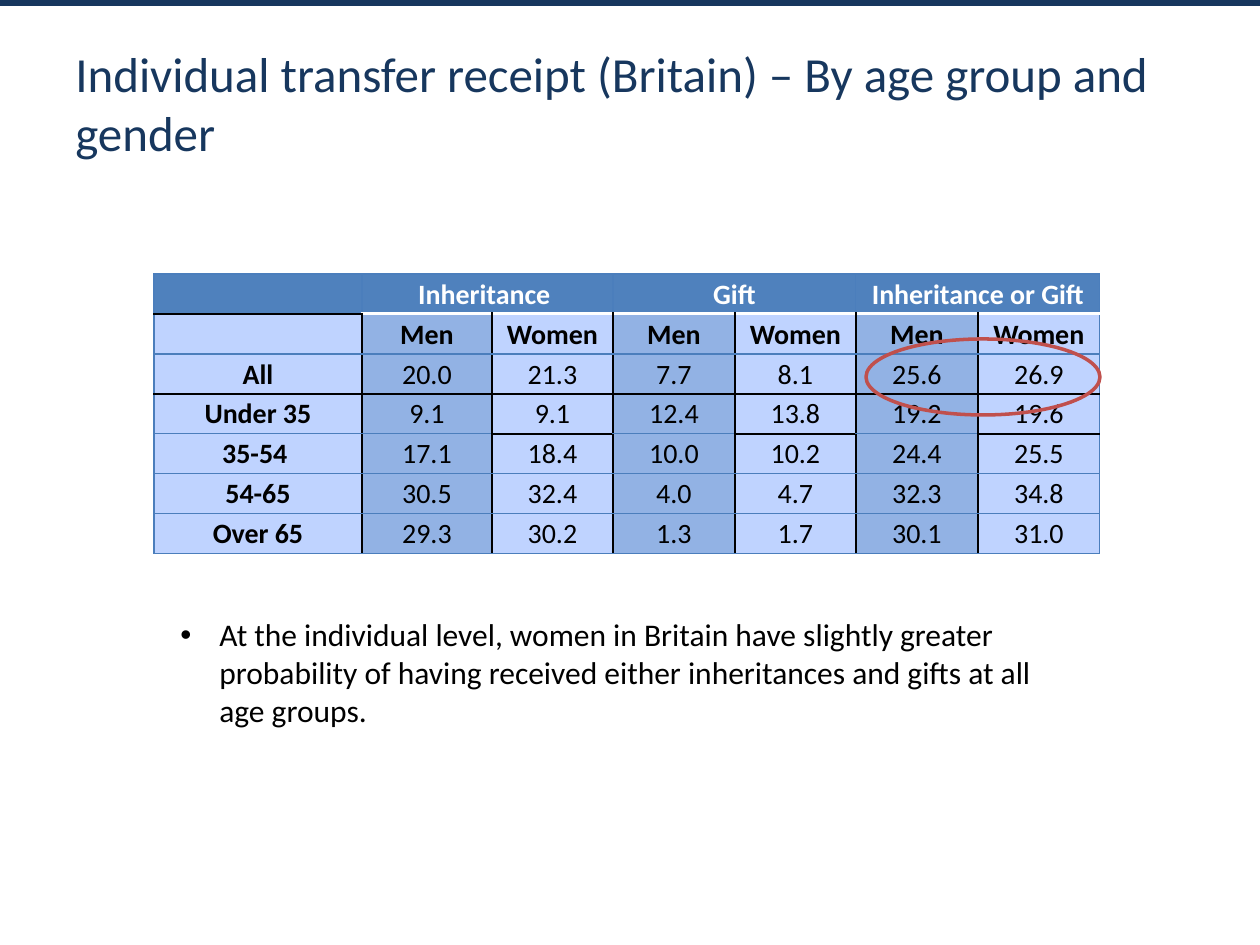
from lxml import etree
from pptx import Presentation, util as u
from pptx.dml.color import RGBColor
from pptx.enum import shapes, text
from pptx.oxml import ns

PX = 914400 / 126
NAVY = RGBColor(0x17, 0x37, 0x5E)
BLACK = RGBColor(0, 0, 0)
WHITE = RGBColor(255, 255, 255)
HEAD = RGBColor(0x4F, 0x81, 0xBD)
MEN = RGBColor(0x92, 0xB2, 0xE4)
PALE = RGBColor(0xBF, 0xD3, 0xFF)
EDGE = RGBColor(0x4B, 0x7E, 0xBC)
RED = RGBColor(0xC0, 0x50, 0x4D)

COLS = [208, 130, 121, 122, 121, 122, 122]
ROW = 40
GROUPS = ["Inheritance ", "Gift", "Inheritance or Gift"]
DATA = [
    ["", *["Men", "Women"] * 3],
    ["All", "20.0", "21.3", "7.7", "8.1", "25.6", "26.9"],
    ["Under 35", "9.1", "9.1", "12.4", "13.8", "19.2", "19.6"],
    ["35-54 ", "17.1", "18.4", "10.0", "10.2", "24.4", "25.5"],
    ["54-65", "30.5", "32.4", "4.0", "4.7", "32.3", "34.8"],
    ["Over 65", "29.3", "30.2", "1.3", "1.7", "30.1", "31.0"],
]


def px(*vals):
    """Turn px lengths into EMU."""
    return [u.Emu(round(v * PX)) for v in vals]


def put(obj, vals):
    """Set each attribute named in a dict."""
    for key, val in vals.items():
        setattr(obj, key, val)


def sub(node, tag, **vals):
    """Append a drawing element with the given attributes."""
    return etree.SubElement(node, ns.qn("a:" + tag), vals)


def style(par, size, ink, bold=False):
    """Set the font of a paragraph."""
    put(par.font, {"name": "Calibri", "size": u.Pt(size), "bold": bold})
    par.font.color.rgb = ink


def band(slide, box):
    """Draw the strip along the top edge."""
    bar = slide.shapes.add_shape(shapes.MSO_SHAPE.RECTANGLE, *px(*box))
    bar.shadow.inherit = False
    bar.fill.solid()
    bar.fill.fore_color.rgb = NAVY
    bar.line.fill.background()


def words(slide, box, line, size, ink, anchor):
    """Add a wrapped text box and return its paragraph."""
    frame = slide.shapes.add_textbox(*px(*box)).text_frame
    put(frame, {"word_wrap": True, "vertical_anchor": anchor})
    par = frame.paragraphs[0]
    par.text = line
    style(par, size, ink)
    return par


def title(slide, box):
    """Place the heading."""
    line = "Individual transfer receipt (Britain) – By age group and gender"
    words(slide, box, line, 28, NAVY, text.MSO_ANCHOR.MIDDLE)


def note(slide, box):
    """Place the bulleted finding."""
    line = ("At the individual level, women in Britain have slightly greater "
            "probability of having received either inheritances and gifts "
            "at all age groups.")
    par = words(slide, box, line, 18, BLACK, text.MSO_ANCHOR.TOP)
    props = par._p.get_or_add_pPr()
    dent = px(39)[0]
    props.set("marL", str(dent))
    props.set("indent", str(-dent))
    mark = etree.Element(ns.qn("a:buFont"), typeface="Arial")
    props.insert(0, mark)
    mark.addnext(etree.Element(ns.qn("a:buChar"), char="•"))


def rule_below(row, col):
    """Give the ink and width of the line under a cell."""
    if row == 0:
        return (WHITE, 2) if col else (BLACK, 0.75)
    women = col and col % 2 == 0
    if row == 2 or row == 3 and women:
        return BLACK, 1
    return EDGE, 0.75


def rule_right(row, col):
    """Give the ink and width of the line right of a cell."""
    inner = row > 0 and 0 <= col < len(COLS) - 1
    return (BLACK, 1) if inner else (EDGE, 0.75)


def frame(cell, row, col):
    """Draw the four borders of a cell."""
    rules = {
        "lnL": rule_right(row, col - 1),
        "lnR": rule_right(row, col),
        "lnT": rule_below(row - 1, col) if row else (EDGE, 0.75),
        "lnB": rule_below(row, col),
    }
    props = cell._tc.get_or_add_tcPr()
    for tag, (ink, wide) in rules.items():
        line = sub(props, tag, w=str(u.Pt(wide)))
        sub(sub(line, "solidFill"), "srgbClr", val=str(ink))


def fill_cell(cell, row, col, line):
    """Write, border and colour one cell."""
    put(cell, {"text": line, "vertical_anchor": text.MSO_ANCHOR.MIDDLE,
               "margin_left": px(1)[0], "margin_right": px(1)[0],
               "margin_top": px(1)[0], "margin_bottom": 0})
    par = cell.text_frame.paragraphs[0]
    par.alignment = text.PP_ALIGN.CENTER
    style(par, 16, BLACK if row else WHITE, row < 2 or col == 0)
    frame(cell, row, col)
    cell.fill.solid()
    cell.fill.fore_color.rgb = HEAD if row == 0 else MEN if col % 2 else PALE


def grid(slide, box):
    """Build the table of receipt rates."""
    heads = [""] + [part for name in GROUPS for part in (name, "")]
    rows = [heads, *DATA]
    table = slide.shapes.add_table(len(rows), len(COLS), *px(*box)).table
    put(table, {"first_row": False, "horz_banding": False})
    for col, wide in zip(table.columns, COLS):
        col.width = px(wide)[0]
    for r, line in enumerate(rows):
        table.rows[r].height = px(ROW)[0]
        for c, word in enumerate(line):
            fill_cell(table.cell(r, c), r, c, word)
    for c in range(1, len(COLS), 2):
        table.cell(0, c).merge(table.cell(0, c + 1))


def ring(slide, box):
    """Circle the overall rates."""
    oval = slide.shapes.add_shape(shapes.MSO_SHAPE.OVAL, *px(*box))
    oval.shadow.inherit = False
    oval.fill.background()
    oval.line.color.rgb = RED
    oval.line.width = u.Pt(2)


def main():
    """Build and save the slide."""
    deck = Presentation()
    put(deck, dict(zip(("slide_width", "slide_height"), px(1260, 945))))
    slide = deck.slides.add_slide(deck.slide_layouts[6])
    band(slide, (0, 0, 1260, 6))
    note(slide, (168, 609, 907, 145))
    title(slide, (63, 3, 1134, 198))
    grid(slide, (154, 274, sum(COLS), ROW * 7))
    ring(slide, (866, 339, 234, 76))
    deck.save("out.pptx")


if __name__ == "__main__":
    main()
